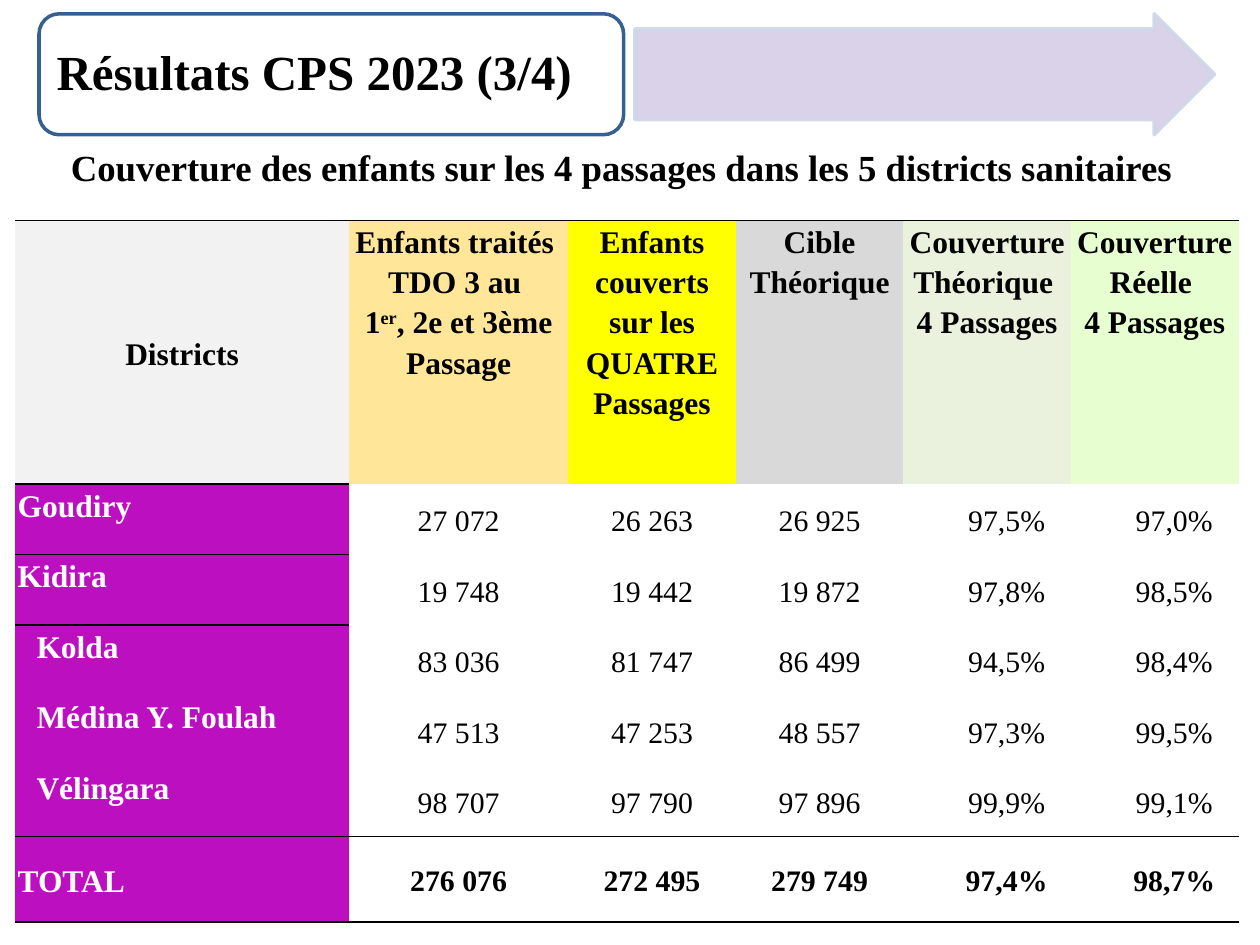
"""Builds the slide on CPS 2023 coverage in the five health districts."""
from lxml.etree import SubElement
from pptx import Presentation
from pptx.dml.color import RGBColor
from pptx.enum.shapes import MSO_SHAPE as Shape
from pptx.enum.text import MSO_ANCHOR as Anchor, PP_ALIGN as Align
from pptx.oxml import parse_xml
from pptx.oxml.ns import nsdecls, qn
from pptx.util import Inches, Pt


def color(value):
    """Turns a hex string into a colour."""
    return RGBColor.from_string(value)


def write(frame, text, size=18, bold=True, ink="000000", align=Align.LEFT,
          anchor=Anchor.TOP, insets=(0.1, 0.05), spacing=1.0, after=0, indent=0):
    """Fills a frame; newlines part paragraphs, and bars enclose superscripts."""
    frame.word_wrap = True
    frame.vertical_anchor = anchor
    frame.margin_left = frame.margin_right = Inches(insets[0])
    frame.margin_top = frame.margin_bottom = Inches(insets[1])
    for number, line in enumerate(text.split("\n")):
        para = frame.add_paragraph() if number else frame.paragraphs[0]
        para.alignment = align
        para.line_spacing = spacing
        para.space_after = Pt(after)
        if indent:
            properties = para._p.get_or_add_pPr()
            properties.set("marL", "0")
            properties.set("indent", str(Inches(indent)))
        for place, part in enumerate(line.split("|")):
            span = para.add_run()
            span.text = part
            span.font.name = "Times New Roman"
            span.font.size = Pt(size)
            span.font.bold = bold
            span.font.color.rgb = color(ink)
            if place % 2:
                span.font._element.set("baseline", "30000")


deck = Presentation()
deck.slide_width, deck.slide_height = Inches(10), Inches(7.5)
page = deck.slides.add_slide(deck.slide_layouts[6])

banner = [
    (Shape.RIGHT_ARROW, 5.04, 4.6, (0.75, 0.5), "D9D2E9", "CFD7E7"),
    (Shape.ROUNDED_RECTANGLE, 0.31, 4.64, (0.167,), "FFFFFF", "366092"),
]
for kind, left, width, adjustments, fill, line in banner:
    shape = page.shapes.add_shape(kind, Inches(left), Inches(0.11), Inches(width), Inches(0.96))
    for index, adjustment in enumerate(adjustments):
        shape.adjustments[index] = adjustment
    shape.shadow.inherit = False
    shape.fill.solid()
    shape.fill.fore_color.rgb = color(fill)
    shape.line.color.rgb = color(line)
    shape.line.width = Pt(2)
    if kind == Shape.RIGHT_ARROW:
        line_color = shape.line._ln.find(".//" + qn("a:srgbClr"))
        SubElement(line_color, qn("a:alpha"), val="89000")

title = page.shapes.add_textbox(Inches(0.37), Inches(0.16), Inches(4.64), Inches(0.87))
write(title.text_frame, "Résultats CPS 2023 (3/4)", size=28, anchor=Anchor.MIDDLE,
      insets=(0.08, 0.04), spacing=0.9)
subtitle = page.shapes.add_textbox(Inches(0.12), Inches(1.1), Inches(9.7), Inches(0.45))
write(subtitle.text_frame,
      "Couverture des enfants sur les 4 passages dans les 5 districts sanitaires ",
      size=21, align=Align.CENTER)

headers = [
    ("Districts", "F2F2F2"),
    ("Enfants traités \nTDO 3 au \n1|er|, 2e et 3ème Passage", "FFE699"),
    ("Enfants couverts sur les QUATRE Passages", "FFFF00"),
    ("Cible Théorique", "D9D9D9"),
    ("Couverture Théorique \n4 Passages", "EAF1DD"),
    ("Couverture Réelle \n4 Passages", "E6FED0"),
]
rows = [
    [text for text, fill in headers],
    ["Goudiry", "27 072", "26 263", "26 925", "97,5%", "97,0%"],
    ["Kidira", "19 748", "19 442", "19 872", "97,8%", "98,5%"],
    ["Kolda", "83 036", "81 747", "86 499", "94,5%", "98,4%"],
    ["Médina Y. Foulah", "47 513", "47 253", "48 557", "97,3%", "99,5%"],
    ["Vélingara", "98 707", "97 790", "97 896", "99,9%", "99,1%"],
    ["TOTAL", "276 076", "272 495", "279 749", "97,4%", "98,7%"],
]
widths = [2.65, 1.74] + [1.33] * 4
heights = [2.09] + [0.56] * 5 + [0.68]
total = len(rows) - 1

table = page.shapes.add_table(len(rows), len(widths), Inches(0.12), Inches(1.75),
                              Inches(9.7), Inches(5.59)).table
table.first_row = table.horz_banding = False
table._tbl.tblPr.find(qn("a:tableStyleId")).text = "{2D5ABB26-0587-4C30-8999-92F81FD0307C}"
for column, width in zip(table.columns, widths):
    column.width = Inches(width)
for row, height in zip(table.rows, heights):
    row.height = Inches(height)

for r, texts in enumerate(rows):
    for c, text in enumerate(texts):
        cell = table.cell(r, c)
        if r == 0:
            fill = headers[c][1]
            style = dict(align=Align.CENTER, insets=(0.02, 0),
                         anchor=Anchor.TOP if c else Anchor.MIDDLE)
        elif c == 0:
            fill = "BC10C0"
            style = dict(ink="FFFFFF", insets=(0.02, 0), indent=0.15 if 3 <= r < total else 0,
                         anchor=Anchor.MIDDLE if r == total else Anchor.TOP)
        else:
            fill = "FFFFFF"
            style = dict(size=17, bold=r == total, align=Align.CENTER, anchor=Anchor.MIDDLE,
                         insets=(0.05, 0), after=10, indent=0.31 if c >= 4 else 0)
        write(cell.text_frame, text, spacing=1.15, **style)
        cell.vertical_anchor = style["anchor"]
        cell.margin_left = cell.margin_right = Inches(style["insets"][0])
        cell.margin_top = cell.margin_bottom = 0
        cell.fill.solid()
        cell.fill.fore_color.rgb = color(fill)
        edges = {
            "lnB": r >= total - 1 or (c == 0 and r < 2),
            "lnT": r in (0, total) or (c == 0 and r in (1, 2)),
        }
        for tag, drawn in edges.items():
            if drawn:
                cell._tc.get_or_add_tcPr().insert(0, parse_xml(
                    f'<a:{tag} {nsdecls("a")} w="{Pt(1)}"><a:solidFill>'
                    f'<a:srgbClr val="000000"/></a:solidFill></a:{tag}>'))

deck.save("out.pptx")
